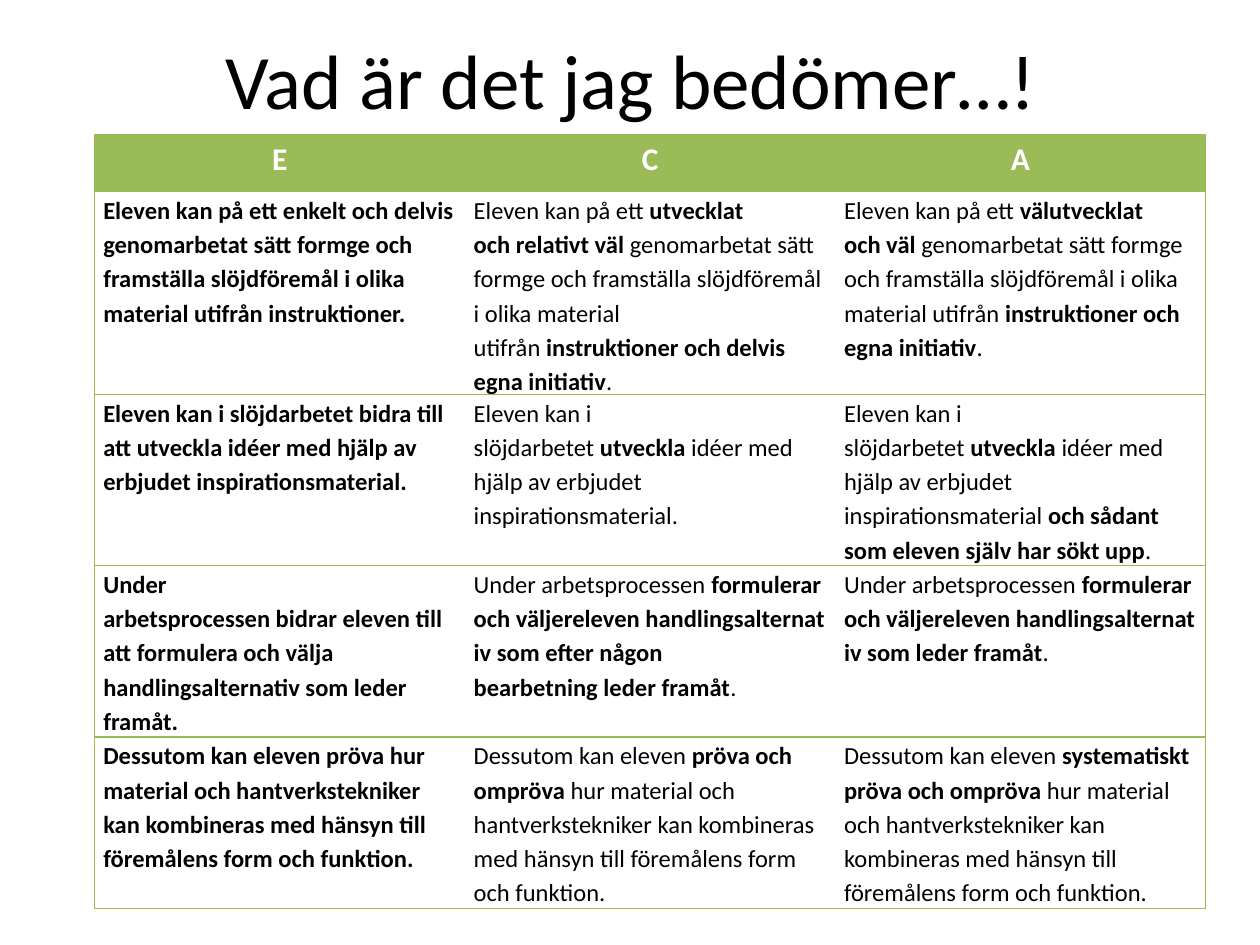
from lxml.etree import SubElement
from pptx import Presentation
from pptx.dml.color import RGBColor
from pptx.enum.text import MSO_ANCHOR, PP_ALIGN
from pptx.oxml.ns import qn
from pptx.util import Inches, Pt

GREEN, BLACK, WHITE = "9BBB59", "000000", "FFFFFF"
NO_STYLE_NO_GRID = "{2D5ABB26-0587-4C30-8999-92F81FD0307C}"
NO_BREAK_SPACE = chr(160)

# In the cell texts * switches bold on and off, and ~ is a no-break space.
ROWS = [
    ["*E", "*C", "*A"],
    [
        "*Eleven~kan på ett~enkelt~och~delvis genomarbetat sätt formge och "
        "framställa slöjdföremål i olika material utifrån instruktioner.",
        "Eleven~kan på ett~*utvecklat och~relativt väl *genomarbetat sätt formge och "
        "framställa slöjdföremål i olika material utifrån~*instruktioner och delvis "
        "egna initiativ*.",
        "Eleven~kan på ett~*välutvecklat och~väl *genomarbetat sätt formge och "
        "framställa slöjdföremål i olika material utifrån *instruktioner~och "
        "egna initiativ*.",
    ],
    [
        "*Eleven~kan i slöjdarbetet~bidra~till att utveckla~idéer med hjälp av "
        "erbjudet inspirationsmaterial.",
        "Eleven~kan i slöjdarbetet*~utveckla*~idéer med hjälp av erbjudet "
        "inspirationsmaterial.",
        "Eleven~kan i slöjdarbetet*~utveckla*~idéer med hjälp av erbjudet "
        "inspirationsmaterial~*och sådant som~eleven~själv har sökt upp*.",
    ],
    [
        "*Under arbetsprocessen~bidrar~eleven~till att formulera och välja "
        "handlingsalternativ som leder framåt.",
        "Under arbetsprocessen~*formulerar och~väljereleven~handlingsalternativ "
        "som efter någon bearbetning~leder framåt*.",
        "Under arbetsprocessen~*formulerar och~väljereleven~handlingsalternativ "
        "som leder framåt*.",
    ],
    [
        "*Dessutom kan~eleven~pröva~hur material och hantverkstekniker kan "
        "kombineras med hänsyn till föremålens form och funktion.",
        "Dessutom kan~eleven~*pröva och ompröva*~hur material och hantverkstekniker "
        "kan kombineras med hänsyn till föremålens form och funktion.",
        "Dessutom kan~eleven~*systematiskt pröva och ompröva*~hur material och "
        "hantverkstekniker kan kombineras med hänsyn till föremålens form och funktion.",
    ],
]


def format_run(run, size, color, bold=False):
    run.font.name = "Calibri"
    run.font.size = Pt(size)
    run.font.bold = bold
    run.font.color.rgb = RGBColor.from_string(color)


def set_borders(cell, visible_sides):
    """Draw 1 pt green lines on the given sides (of L, R, T, B), none elsewhere."""
    properties = cell._tc.get_or_add_tcPr()
    for side in "LRTB":
        line = SubElement(properties, qn(f"a:ln{side}"), w=str(Pt(1)))
        if side in visible_sides:
            fill = SubElement(line, qn("a:solidFill"))
            SubElement(fill, qn("a:srgbClr"), val=GREEN)
        else:
            SubElement(line, qn("a:noFill"))


presentation = Presentation()
presentation.slide_width = Inches(10)
presentation.slide_height = Inches(7.5)
slide = presentation.slides.add_slide(presentation.slide_layouts[6])

# Title
title = slide.shapes.add_textbox(Inches(0.51), Inches(0), Inches(9), Inches(1.25))
title_frame = title.text_frame
title_frame.word_wrap = True
title_frame.vertical_anchor = MSO_ANCHOR.MIDDLE
title_frame.text = "Vad är det jag bedömer…!"
title_paragraph = title_frame.paragraphs[0]
title_paragraph.alignment = PP_ALIGN.CENTER
format_run(title_paragraph.runs[0], 44, BLACK)

# Grading table
table = slide.shapes.add_table(
    len(ROWS), 3, Inches(0.75), Inches(1.07), Inches(8.82), Inches(5.89)
).table
table.first_row = True
table.horz_banding = False
table._tbl.tblPr.find(qn("a:tableStyleId")).text = NO_STYLE_NO_GRID
for column in table.columns:
    column.width = Inches(2.94)

for row_index, texts in enumerate(ROWS):
    is_header = row_index == 0
    table.rows[row_index].height = Inches(0.45 if is_header else 1.36)
    for column_index, text in enumerate(texts):
        cell = table.cell(row_index, column_index)
        set_borders(cell, ("LTB", "TB", "RTB")[column_index])
        cell.margin_left = cell.margin_right = Inches(0.07)
        cell.margin_top = cell.margin_bottom = Inches(0)
        if is_header:
            cell.fill.solid()
            cell.fill.fore_color.rgb = RGBColor.from_string(GREEN)
        else:
            cell.fill.background()

        paragraph = cell.text_frame.paragraphs[0]
        paragraph.line_spacing = 1.15
        paragraph.alignment = PP_ALIGN.CENTER if is_header else PP_ALIGN.LEFT
        for part_index, part in enumerate(text.split("*")):
            if part:
                run = paragraph.add_run()
                run.text = part.replace("~", NO_BREAK_SPACE)
                format_run(
                    run,
                    18 if is_header else 14,
                    WHITE if is_header else BLACK,
                    bold=part_index % 2 == 1,
                )

presentation.save("out.pptx")
